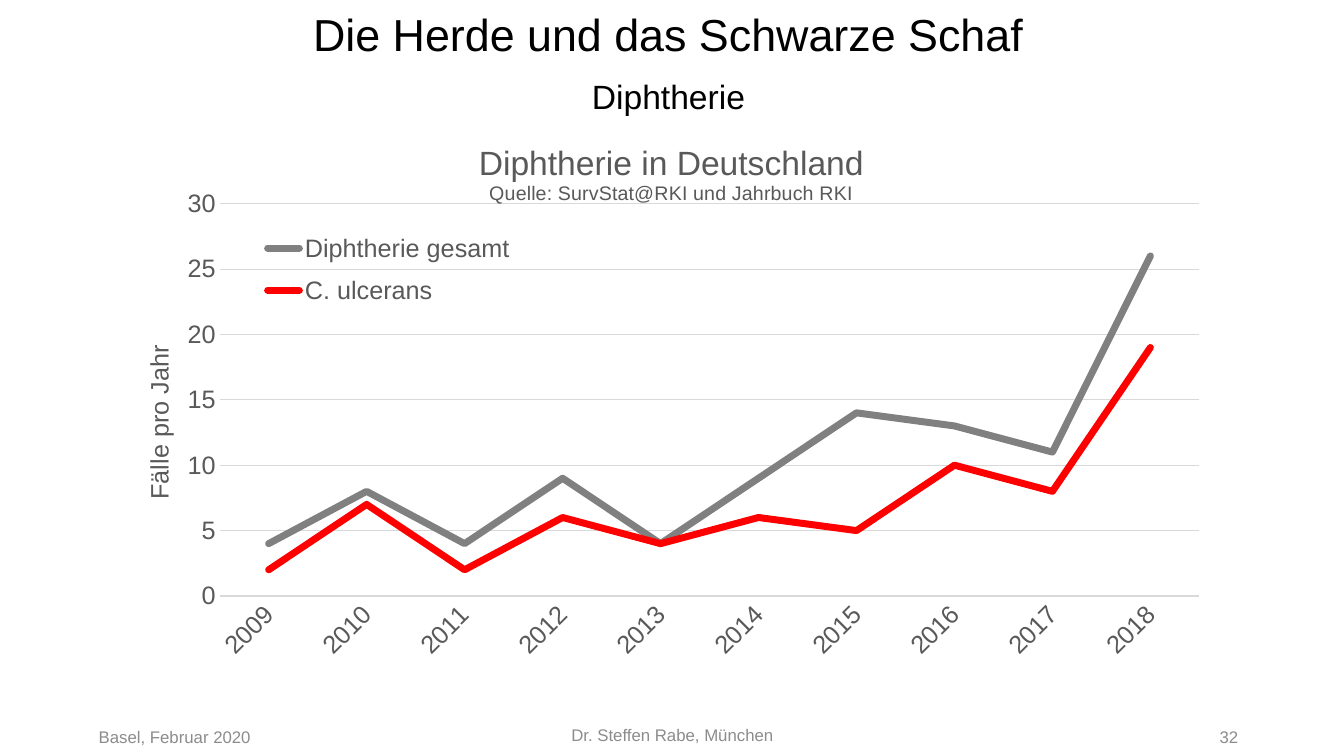
import dataclasses
import typing

import lxml.etree
import pptx
import pptx.chart.data
import pptx.dml.color
import pptx.enum.chart
import pptx.enum.text
import pptx.oxml.ns
import pptx.util

Inches = pptx.util.Inches
Pt = pptx.util.Pt
Align = pptx.enum.text.PP_ALIGN
HUES = {"black": "000000", "text": "595959", "foot": "8C8C8C",
        "grid": "D9D9D9", "total": "808080", "ulcer": "FF0000"}
FACE = "Arial"


@dataclasses.dataclass
class Note:
    text: str
    left: float
    top: float
    width: float
    align: Align


@dataclasses.dataclass
class Trend:
    name: str
    hue: str
    cases: tuple[int, ...]


NOTES = [
    Note("Basel, Februar 2020", 0.88, 7.11, 3, Align.LEFT),
    Note("Dr. Steffen Rabe, München", 4.42, 7.09, 4.5, Align.CENTER),
    Note("32", 9.38, 7.11, 3, Align.RIGHT),
]
YEARS = [str(year) for year in range(2009, 2019)]
TRENDS = [
    Trend("Diphtherie gesamt", "total", (4, 8, 4, 9, 4, 9, 14, 13, 11, 26)),
    Trend("C. ulcerans", "ulcer", (2, 7, 2, 6, 4, 6, 5, 10, 8, 19)),
]


def tint(hue: str) -> pptx.dml.color.RGBColor:
    return pptx.dml.color.RGBColor.from_string(HUES[hue])


def style(font: typing.Any, size: float, hue: str) -> None:
    font.name = FACE
    font.size = Pt(size)
    font.bold = False
    font.color.rgb = tint(hue)


def write(frame: typing.Any, lines: list[tuple[str, float]], hue: str,
          align: Align = Align.CENTER) -> None:
    """Fill a text frame with one paragraph per (text, size)."""
    frame.text = "\n".join(text for text, _ in lines)
    for para, (_, size) in zip(frame.paragraphs, lines):
        para.alignment = align
        style(para.font, size, hue)


def rule(line: typing.Any, hue: str, width: float) -> None:
    line.color.rgb = tint(hue)
    line.width = Pt(width)


def place(part: typing.Any, index: int, inner: bool = False,
          **sides: float) -> None:
    """Give a chart part a fixed layout in fractions of the chart."""
    tag = pptx.oxml.ns.qn
    for old in part.findall(tag("c:layout")):
        part.remove(old)
    layout = lxml.etree.Element(tag("c:layout"))
    manual = lxml.etree.SubElement(layout, tag("c:manualLayout"))
    items = [("layoutTarget", "inner")] if inner else []
    items += [(f"{side}Mode", "edge") for side in ("x", "y")]
    items += [(side, str(value)) for side, value in sides.items()]
    for name, value in items:
        lxml.etree.SubElement(manual, tag(f"c:{name}")).set("val", value)
    part.insert(index, layout)


def add_note(slide: typing.Any, note: Note) -> None:
    box = slide.shapes.add_textbox(Inches(note.left), Inches(note.top),
                                   Inches(note.width), Inches(0.4))
    frame = box.text_frame
    frame.word_wrap = True
    frame.vertical_anchor = pptx.enum.text.MSO_ANCHOR.MIDDLE
    write(frame, [(note.text, 12)], "foot", note.align)


def add_head(slide: typing.Any) -> None:
    head = slide.shapes.title
    head.left, head.top = Inches(0.88), Inches(0.01)
    head.width, head.height = Inches(11.5), Inches(1.2)
    frame = head.text_frame
    frame.auto_size = pptx.enum.text.MSO_AUTO_SIZE.NONE
    frame.vertical_anchor = pptx.enum.text.MSO_ANCHOR.MIDDLE
    write(frame, [("Die Herde und das Schwarze Schaf", 32),
                  ("Diphtherie", 24)], "black")
    frame.paragraphs[1].space_before = Pt(11)


def add_graph(slide: typing.Any) -> None:
    data = pptx.chart.data.CategoryChartData()
    data.categories = YEARS
    for trend in TRENDS:
        data.add_series(trend.name, trend.cases)
    chart = slide.shapes.add_chart(
        pptx.enum.chart.XL_CHART_TYPE.LINE, Inches(1.26), Inches(1.16),
        Inches(10.81), Inches(5.7), data).chart
    style(chart.font, 18, "text")
    root = chart.element
    place(root.xpath("c:chart/c:plotArea")[0], 0, inner=True,
          x=0.085, y=0.151, w=0.899, h=0.683)

    # Chart title with source line
    chart.has_title = True
    write(chart.chart_title.text_frame,
          [("Diphtherie in Deutschland", 24),
           ("Quelle: SurvStat@RKI und Jahrbuch RKI", 14)], "text")
    place(root.xpath("c:chart/c:title")[0], 1, x=0.32, y=0.04)

    # Legend inside the plot
    chart.has_legend = True
    legend = chart.legend
    legend.position = pptx.enum.chart.XL_LEGEND_POSITION.RIGHT
    legend.include_in_layout = False
    style(legend.font, 18, "text")
    place(legend.font and root.xpath("c:chart/c:legend")[0], 1,
          x=0.11, y=0.18, w=0.26, h=0.17)

    # Axes
    years, count = chart.category_axis, chart.value_axis
    for axis in (years, count):
        axis.major_tick_mark = pptx.enum.chart.XL_TICK_MARK.NONE
        style(axis.tick_labels.font, 18, "text")
    rule(years.format.line, "grid", 0.75)
    root.xpath(".//c:catAx/c:txPr/a:bodyPr")[0].set("rot", "-2700000")
    count.minimum_scale, count.maximum_scale = 0, 30
    count.major_unit = 5
    count.format.line.fill.background()
    rule(count.major_gridlines.format.line, "grid", 0.75)
    write(count.axis_title.text_frame, [("Fälle pro Jahr", 18)], "text")
    title = root.xpath(".//c:valAx/c:title")[0]
    title.xpath(".//a:bodyPr")[0].set("rot", "-5400000")
    place(title, 1, x=0.01, y=0.39)

    # Lines
    for line, trend in zip(chart.plots[0].series, TRENDS):
        line.smooth = False
        line.marker.style = pptx.enum.chart.XL_MARKER_STYLE.NONE
        rule(line.format.line, trend.hue, 5)
    for stroke in root.xpath(".//c:ser/c:spPr/a:ln"):
        stroke.set("cap", "rnd")


def main() -> None:
    deck = pptx.Presentation()
    deck.slide_width, deck.slide_height = Inches(13.33), Inches(7.5)
    slide = deck.slides.add_slide(deck.slide_layouts[5])
    for note in NOTES:
        add_note(slide, note)
    add_graph(slide)
    add_head(slide)
    deck.save("out.pptx")


if __name__ == "__main__":
    main()
